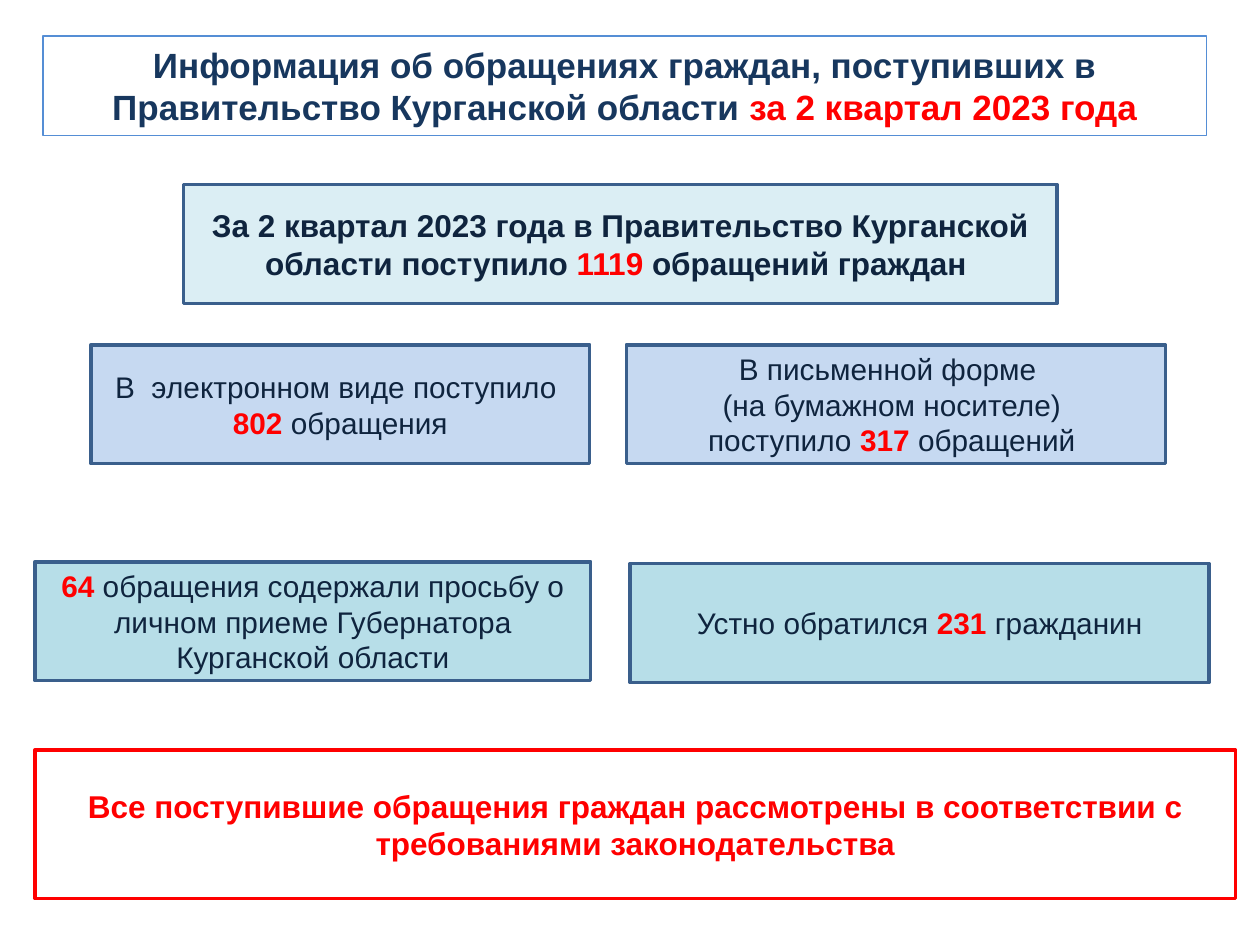
from pptx import Presentation
from pptx import util as u
from pptx.dml import color as col
from pptx.enum import shapes, text

NAVY, DARK, RED, EDGE = "17375E", "0F243E", "FF0000", "3A5F8C"
PALE, BLUE, TEAL = "DBEEF4", "C6D9F1", "B7DEE8"


def rgb(code):
    return col.RGBColor.from_string(code)


def write(frame, paras, size=17, color=DARK, bold=False, font="Arial"):
    """Each paragraph is a list of runs; a run in a tuple is bold red."""
    frame.word_wrap = True
    frame.auto_size = text.MSO_AUTO_SIZE.NONE
    frame.vertical_anchor = text.MSO_ANCHOR.MIDDLE
    for i, runs in enumerate(paras):
        para = frame.paragraphs[0] if i == 0 else frame.add_paragraph()
        para.alignment = text.PP_ALIGN.CENTER
        for part in runs:
            key = isinstance(part, tuple)
            run = para.add_run()
            run.text = part[0] if key else part
            run.font.name = font
            run.font.size = u.Pt(size)
            run.font.bold = bold or key
            run.font.color.rgb = rgb(RED if key else color)


class Deck:
    def __init__(self):
        self.prs = Presentation()
        self.prs.slide_width, self.prs.slide_height = u.Pt(720), u.Pt(540)
        self.slide = self.prs.slides.add_slide(self.prs.slide_layouts[5])

    def title(self, area, paras, line, **style):
        head = self.slide.shapes.title
        head.left, head.top, head.width, head.height = map(u.Pt, area)
        head.line.color.rgb = rgb(line)
        head.line.width = u.Pt(0.75)
        write(head.text_frame, paras, **style)

    def box(self, area, paras, fill=None, line=EDGE, **style):
        box = self.slide.shapes.add_shape(
            shapes.MSO_SHAPE.RECTANGLE, *map(u.Pt, area))
        box.shadow.inherit = False
        if fill:
            box.fill.solid()
            box.fill.fore_color.rgb = rgb(fill)
        else:
            box.fill.background()
        box.line.color.rgb = rgb(line)
        box.line.width = u.Pt(2)
        write(box.text_frame, paras, **style)


def main():
    deck = Deck()

    # Heading
    deck.title((24.5, 20.5, 665, 57), [[
        "Информация об обращениях граждан, поступивших в "
        "Правительство Курганской области ",
        ("за 2 квартал 2023 года",)]],
        line="558ED5", size=20, color=NAVY, bold=True)

    # Total
    deck.box((105, 105.5, 499, 68), [[
        "За 2 квартал 2023 года в Правительство Курганской области поступило ",
        ("1119 ",), "обращений граждан "]], PALE, size=18, bold=True)

    # Electronic and paper
    deck.box((52, 197, 285, 68), [[
        "В  электронном виде поступило  ", ("802",), " обращения"]], BLUE)
    deck.box((358, 197, 308, 68), [
        ["В письменной форме  "],
        ["(на бумажном носителе) "],
        ["поступило ", ("317",), " обращений "]], BLUE)

    # Reception requests and oral appeals
    deck.box((20, 321, 317.5, 68), [[
        ("64 ",), "обращения содержали просьбу о личном приеме "
        "Губернатора Курганской области"]], TEAL)
    deck.box((360, 322, 331, 68), [[
        "Устно обратился ", ("231 ",), "гражданин"]], TEAL)

    # Conclusion
    deck.box((20, 428.5, 686, 85), [[
        "Все поступившие обращения граждан рассмотрены в соответствии "
        "с требованиями законодательства"]],
        line=RED, size=18, color=RED, bold=True)

    deck.prs.save("out.pptx")


if __name__ == "__main__":
    main()
